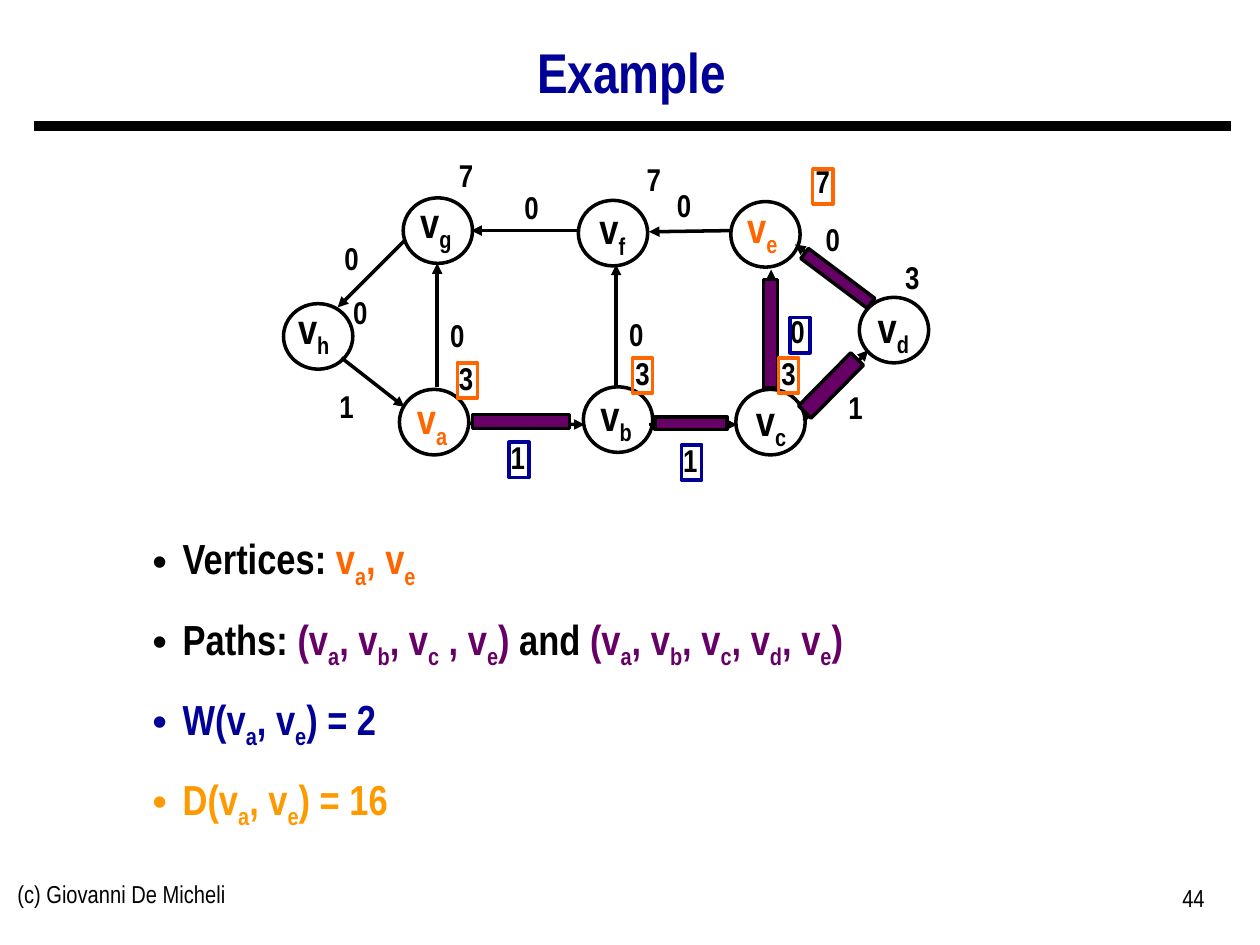
from lxml import etree
from pptx import Presentation
from pptx.dml.color import RGBColor
from pptx.enum.shapes import MSO_CONNECTOR, MSO_SHAPE
from pptx.enum.text import MSO_ANCHOR, MSO_AUTO_SIZE, PP_ALIGN
from pptx.oxml.ns import qn
from pptx.util import Inches, Pt

LINE = MSO_CONNECTOR.STRAIGHT
CIRCLE = MSO_SHAPE.FLOWCHART_CONNECTOR
RECT = MSO_SHAPE.RECTANGLE
LEFT, CENTER, RIGHT = PP_ALIGN.LEFT, PP_ALIGN.CENTER, PP_ALIGN.RIGHT
TOP, MIDDLE = MSO_ANCHOR.TOP, MSO_ANCHOR.MIDDLE
NO_AUTOFIT = MSO_AUTO_SIZE.NONE

FONT = "Arial Narrow"
COLORS = {"black": "000000", "blue": "000099", "orange": "FF6600",
          "purple": "660066", "amber": "FF9900"}

NODE_SIZE = (0.55, 0.52)
NAME_SIZE = (1.4, 0.5)
LABEL_SIZE = (0.6, 0.4)
MARK_SIZE = (0.16, 0.28)

# name: circle corner, name corner, colour
NODES = {
    "a": ((3.17, 3.09), (2.73, 3.07), "orange"),
    "b": ((4.63, 3.07), (4.19, 3.04), "black"),
    "c": ((5.84, 3.09), (5.42, 3.08), "black"),
    "d": ((6.82, 2.36), (6.39, 2.34), "black"),
    "e": ((5.8, 1.6), (5.35, 1.55), "orange"),
    "f": ((4.59, 1.59), (4.16, 1.56), "black"),
    "g": ((3.2, 1.57), (2.76, 1.51), "black"),
    "h": ((2.25, 2.41), (1.79, 2.35), "black"),
}
EDGES = [
    ((3.47, 3.07), (3.47, 2.09)), ((3.21, 1.91), (2.68, 2.44)),
    ((2.71, 2.84), (3.21, 3.23)), ((4.89, 3.07), (4.89, 2.1)),
    ((5.81, 1.83), (5.15, 1.84)), ((6.38, 3.34), (6.89, 2.78)),
    ((6.94, 2.4), (6.31, 1.94)), ((6.12, 3.07), (6.12, 2.14)),
    ((3.71, 3.36), (4.64, 3.37)), ((5.15, 3.37), (5.85, 3.37)),
    ((4.58, 1.83), (3.74, 1.83)),
]
LABELS = {
    "0": [(6.31, 1.7), (5.13, 1.43), (6.03, 2.43), (4.75, 2.45),
          (3.33, 2.46), (3.92, 1.44), (2.49, 1.85), (2.56, 2.28)],
    "1": [(6.49, 3.03), (5.18, 3.45), (3.81, 3.43), (2.45, 3.02)],
    "3": [(6.94, 2), (5.96, 2.76), (4.8, 2.76), (3.4, 2.8)],
    "7": [(3.4, 1.19), (4.89, 1.22), (6.23, 1.24)],
}
PATH_BARS = [
    ((3.75, 3.29), (0.77, 0.11), 0), ((5.2, 3.31), (0.57, 0.1), 0),
    ((6.06, 2.22), (0.11, 0.86), 0), ((6.3, 2.99), (0.59, 0.14), 314.6),
    ((6.32, 2.16), (0.66, 0.1), 36.9),
]
MARKS = {
    "orange": [(3.63, 2.88), (6.45, 1.34), (5.02, 2.84), (6.18, 2.84)],
    "blue": [(4.04, 3.51), (6.27, 2.52), (5.41, 3.53)],
}
BULLETS = [
    [("Vertices: ", "black"), ("v_a, v_e", "orange")],
    [("Paths: ", "black"), ("(v_a, v_b, v_c , v_e)", "purple"),
     (" and ", "black"), ("(v_a, v_b, v_c, v_d, v_e)", "purple")],
    [("W(v_a, v_e) = 2", "blue")],
    [("D(v_a, v_e) = 16", "amber")],
]


def rgb(name):
    return RGBColor.from_string(COLORS[name])


def inches(*values):
    return [Inches(v) for v in values]


def add_run(p, text, size, color, bold, subscript=False):
    r = p.add_run()
    r.text = text
    r.font.name, r.font.size, r.font.bold = FONT, Pt(size), bold
    r.font.color.rgb = rgb(color)
    if subscript:
        r._r.get_or_add_rPr().set("baseline", "-25000")


def write(p, text, size, color="black", bold=True, align=CENTER):
    p.alignment = align
    first, *rest = text.split("_")
    add_run(p, first, size, color, bold)
    for part in rest:
        add_run(p, part[0], size, color, bold, subscript=True)
        if part[1:]:
            add_run(p, part[1:], size, color, bold)


def add_text(s, at, size, text, points, **style):
    tf = s.shapes.add_textbox(*inches(*at, *size)).text_frame
    tf.word_wrap = True
    write(tf.paragraphs[0], text, points, **style)


def add_line(s, start, end, width, arrow=False):
    line = s.shapes.add_connector(LINE, *inches(*start, *end))
    line.line.color.rgb = rgb("black")
    line.line.width = Pt(width)
    if arrow:
        etree.SubElement(line.line._get_or_add_ln(), qn("a:tailEnd"), type="triangle")
    etree.SubElement(line._element.spPr, qn("a:effectLst"))


def add_outline(s, kind, at, size, color="black", fill=None, rotation=0):
    sp = s.shapes.add_shape(kind, *inches(*at, *size))
    sp.shadow.inherit = False
    sp.rotation = rotation
    sp.line.color.rgb = rgb(color)
    sp.line.width = Pt(2)
    if fill:
        sp.fill.solid()
        sp.fill.fore_color.rgb = rgb(fill)
    else:
        sp.fill.background()


def place(sp, at, size, anchor):
    sp.left, sp.top, sp.width, sp.height = inches(*at, *size)
    tf = sp.text_frame
    tf.auto_size, tf.vertical_anchor = NO_AUTOFIT, anchor
    return tf


def add_title(s):
    tf = place(s.shapes.title, (0.26, 0.22), (9.51, 0.75), MIDDLE)
    p = tf.paragraphs[0]
    p.line_spacing = 0.9
    write(p, "Example", 32, "blue")


def add_bullets(s):
    tf = place(s.placeholders[1], (1.11, 4.18), (7.39, 2.3), TOP)
    for i, parts in enumerate(BULLETS):
        p = tf.add_paragraph() if i else tf.paragraphs[0]
        p.space_before = Pt(13 if i else 0)
        pPr = p._p.get_or_add_pPr()
        pPr.set("marL", str(Inches(0.24)))
        pPr.set("indent", str(-Inches(0.24)))
        etree.SubElement(pPr, qn("a:buChar"), char="•")
        for text, color in parts:
            write(p, text, 24, color, align=LEFT)


def add_graph(s):
    for text, spots in LABELS.items():
        for at in spots:
            add_text(s, at, LABEL_SIZE, text, 18)
    for start, end in EDGES:
        add_line(s, start, end, 2, arrow=True)
    for name, (circle_at, name_at, color) in NODES.items():
        add_outline(s, CIRCLE, circle_at, NODE_SIZE)
        add_text(s, name_at, NAME_SIZE, f"v_{name}", 24, color=color)
    for at, size, rotation in PATH_BARS:
        add_outline(s, RECT, at, size, fill="purple", rotation=rotation)
    for color, spots in MARKS.items():
        for at in spots:
            add_outline(s, RECT, at, MARK_SIZE, color)


def main():
    prs = Presentation()
    prs.slide_width, prs.slide_height = inches(10, 7.5)
    s = prs.slides.add_slide(prs.slide_layouts[1])
    add_title(s)
    add_line(s, (0.27, 1), (9.77, 1), 6)
    add_text(s, (0.04, 6.93), (3.17, 0.52), "(c) Giovanni De Micheli", 14,
             bold=False, align=LEFT)
    add_text(s, (7.33, 6.96), (2.33, 0.52), "44", 14, bold=False, align=RIGHT)
    add_graph(s)
    add_bullets(s)
    prs.save("out.pptx")


if __name__ == "__main__":
    main()
